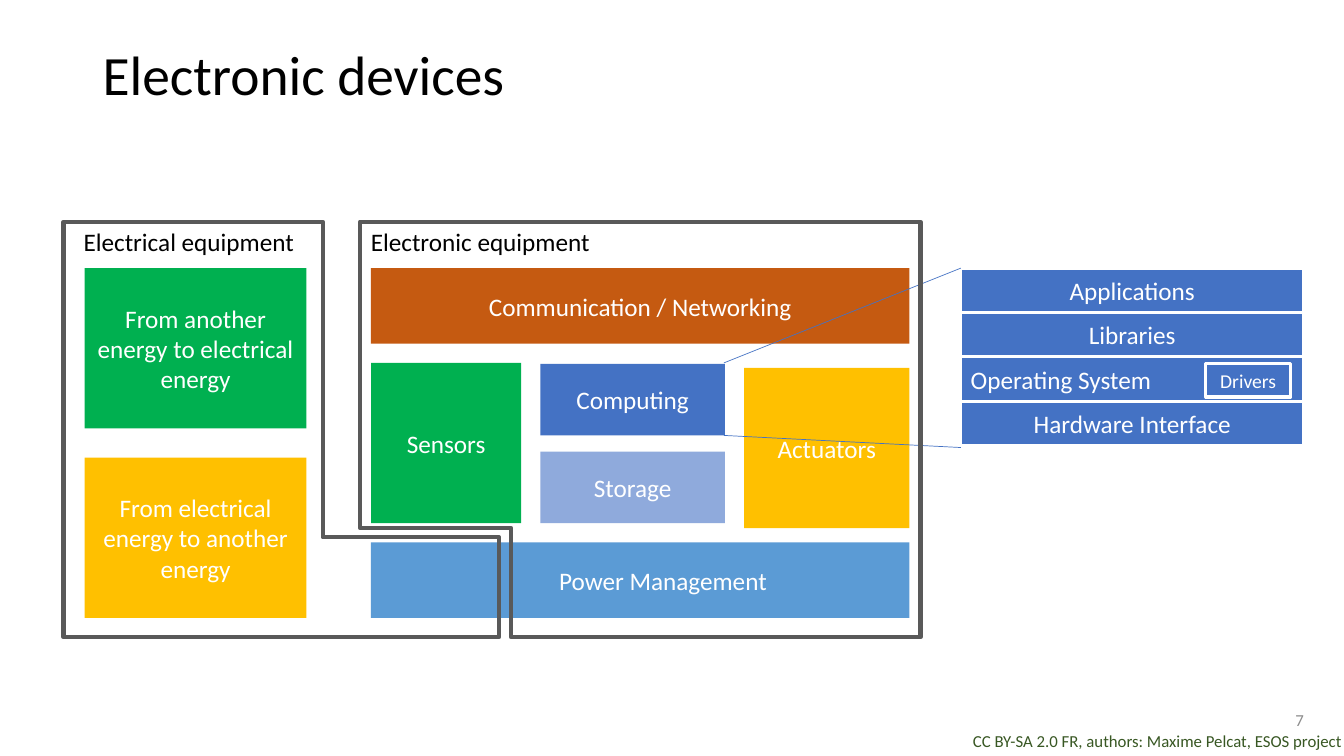
from dataclasses import dataclass

from lxml import etree
from pptx import Presentation
from pptx.dml.color import RGBColor
from pptx.enum.shapes import MSO_CONNECTOR, MSO_SHAPE
from pptx.enum.text import MSO_ANCHOR, PP_ALIGN
from pptx.oxml.ns import qn
from pptx.util import Pt

LEFT, CENTER, RIGHT = PP_ALIGN.LEFT, PP_ALIGN.CENTER, PP_ALIGN.RIGHT
TOP, MIDDLE = MSO_ANCHOR.TOP, MSO_ANCHOR.MIDDLE
RECTANGLE, CORNER = MSO_SHAPE.RECTANGLE, MSO_SHAPE.CORNER
STRAIGHT = MSO_CONNECTOR.STRAIGHT
PX = 9144


@dataclass(frozen=True)
class Theme:
    font: str = "Calibri"
    black: str = "000000"
    white: str = "FFFFFF"
    green: str = "00B050"
    yellow: str = "FFC000"
    orange: str = "C55A11"
    blue: str = "4472C4"
    light_blue: str = "8FAADC"
    sky_blue: str = "5B9BD5"
    outline: str = "595959"
    page_number: str = "8C8C8C"
    credit: str = "385723"
    title_size: float = 39.6
    body_size: float = 18
    driver_size: float = 14
    small_size: float = 12


theme = Theme()

presentation = Presentation()
presentation.slide_width = 1333 * PX
presentation.slide_height = 750 * PX
slide = presentation.slides.add_slide(presentation.slide_layouts[6])


def write_text(shape, text, size, color, alignment, anchor, wrap=True):
    frame = shape.text_frame
    frame.text = text
    frame.word_wrap = wrap
    frame.vertical_anchor = anchor
    paragraph = frame.paragraphs[0]
    paragraph.alignment = alignment
    font = paragraph.runs[0].font
    font.name = theme.font
    font.size = Pt(size)
    font.color.rgb = RGBColor.from_string(color)


def add_block(text, box, fill, bordered=False, size=theme.body_size, alignment=CENTER):
    block = slide.shapes.add_shape(RECTANGLE, *(length * PX for length in box))
    block.shadow.inherit = False
    block.fill.solid()
    block.fill.fore_color.rgb = RGBColor.from_string(fill)
    if bordered:
        block.line.color.rgb = RGBColor.from_string(theme.white)
        block.line.width = Pt(2.25)
    else:
        block.line.fill.background()
    write_text(block, text, size, theme.white, alignment, MIDDLE)
    return block


title = slide.shapes.add_textbox(92 * PX, 40 * PX, 1150 * PX, 73 * PX)
write_text(title, "Electronic devices", theme.title_size, theme.black, LEFT, MIDDLE)
title.text_frame.paragraphs[0].line_spacing = 0.9

labels = [
    ("CC BY-SA 2.0 FR, authors: Maxime Pelcat, ESOS project",
     (892, 720, 449, 30), theme.small_size, theme.credit, RIGHT, TOP, False),
    ("7", (1223, 694, 80, 40), theme.small_size, theme.page_number, RIGHT, MIDDLE, True),
    ("Electronic equipment", (358, 220, 240, 40), theme.body_size, theme.black, LEFT, TOP, False),
    ("Electrical equipment", (73, 220, 231, 40), theme.body_size, theme.black, LEFT, TOP, False),
]
for text, box, *style in labels:
    label = slide.shapes.add_textbox(*(length * PX for length in box))
    write_text(label, text, *style)

blocks = [
    ("Sensors", (368, 360, 149, 159), theme.green),
    ("Actuators", (738, 365, 164, 159), theme.yellow),
    ("Computing", (536, 361, 183, 71), theme.blue),
    ("Storage", (536, 448, 183, 71), theme.light_blue),
    ("Communication / Networking", (368, 266, 534, 75), theme.orange),
    ("From another energy to electrical energy", (84, 266, 220, 159), theme.green),
    ("From electrical energy to another energy", (84, 454, 220, 159), theme.yellow),
]
for text, box, fill in blocks:
    add_block(text, box, fill)

power_management = add_block("Power Management", (368, 538, 534, 75), theme.sky_blue)
power_management.text_frame.margin_left = 55 * PX

layers = [
    ("Applications", CENTER),
    ("Libraries", CENTER),
    ("Operating System", LEFT),
    ("Hardware Interface", CENTER),
]
stack_top, layer_height = 266, 44
for index, (text, alignment) in reversed(list(enumerate(layers))):
    box = (953, stack_top + index * layer_height, 340, layer_height)
    add_block(text, box, theme.blue, True, alignment=alignment)
add_block("Drivers", (1196, 361, 84, 33), theme.blue, True, theme.driver_size)

for start_y, end_y in [(360, 266), (432, 444)]:
    zoom_line = slide.shapes.add_connector(
        STRAIGHT, 718 * PX, start_y * PX, 953 * PX, end_y * PX)
    zoom_line.line.color.rgb = RGBColor.from_string(theme.blue)
    zoom_line.line.width = Pt(0.5)
    etree.SubElement(zoom_line._element.spPr, qn("a:effectLst"))

frames = [
    (357, 556, 180, 0.737, 0.986),
    (63, 432, 0, 0.24, 0.624),
]
for left, width, rotation, foot_ratio, stem_ratio in frames:
    frame = slide.shapes.add_shape(CORNER, left * PX, 220 * PX, width * PX, 412 * PX)
    frame.rotation = rotation
    frame.adjustments[0] = foot_ratio
    frame.adjustments[1] = stem_ratio
    frame.shadow.inherit = False
    frame.fill.background()
    frame.line.color.rgb = RGBColor.from_string(theme.outline)
    frame.line.width = Pt(3)

presentation.save("out.pptx")
